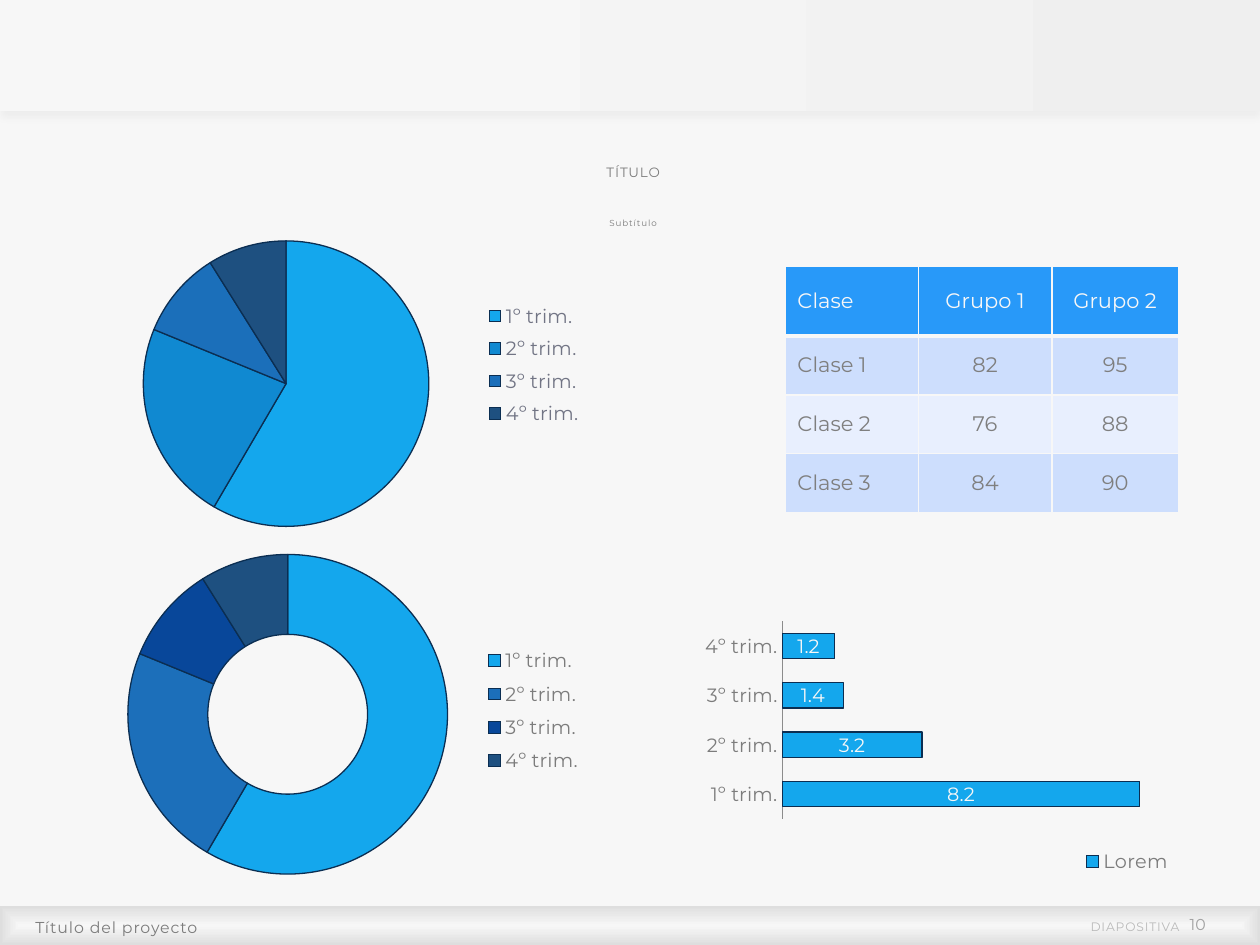
import pptx
import pptx.chart.data
import pptx.dml.color
import pptx.enum.chart
import pptx.enum.shapes
import pptx.enum.text
import pptx.oxml
import pptx.oxml.ns
import pptx.util
from dataclasses import dataclass

Pt = pptx.util.Pt
qn = pptx.oxml.ns.qn
CHART = pptx.enum.chart.XL_CHART_TYPE
LEGEND = pptx.enum.chart.XL_LEGEND_POSITION
ALIGN = pptx.enum.text.PP_ALIGN
ANCHOR = pptx.enum.text.MSO_ANCHOR

# Content
TITLE, SUBTITLE, PROJECT = "TÍTULO", "Subtítulo", "Título del proyecto"
PAGE_LABEL, PAGE_NUMBER = "DIAPOSITIVA", "10"
QUARTERS = ["1º trim.", "2º trim.", "3º trim.", "4º trim."]
SHARES = ("Series 1", [59, 23, 10, 9])
AMOUNTS = ("Lorem", [8.2, 3.2, 1.4, 1.2])
CLASSES = [
    ("Clase", "Grupo 1", "Grupo 2"),
    ("Clase 1", "82", "95"),
    ("Clase 2", "76", "88"),
    ("Clase 3", "84", "90"),
]


@dataclass(frozen=True)
class Theme:
    font: str = "Montserrat"
    paper: str = "F7F7F7"
    header_end: str = "EFEFEF"
    footer_edge: str = "DEDEDE"
    text: str = "7C7C7C"
    pie_legend: str = "717484"
    cell_text: str = "7F7F7F"
    page_label: str = "B9B9B9"
    page_number: str = "A1A1A1"
    outline: str = "0B2E52"
    axis: str = "8C8C8C"
    bar: str = "14A7ED"
    table_head: str = "2899F9"
    bands: tuple = ("CDDEFD", "E8EFFE")
    pie: tuple = ("14A7ED", "1089D1", "1B6FBA", "1E5080")
    ring: tuple = ("14A7ED", "1C6FBA", "08479A", "1E5080")
    title_size: float = 7.7
    subtitle_size: float = 5
    small: float = 7
    note: float = 9
    chart_size: float = 11
    table_size: float = 12


T = Theme()


def rgb(color):
    return pptx.dml.color.RGBColor.from_string(color)


def points(*lengths):
    return [Pt(v) for v in lengths]


def style(font, size, color):
    font.name, font.size, font.bold = T.font, Pt(size), False
    font.color.rgb = rgb(color)


def write(sp, box, text, size, color, align, anchor=ANCHOR.MIDDLE, inset=0, leading=1, spacing=0):
    sp.left, sp.top, sp.width, sp.height = points(*box)
    tf = sp.text_frame
    tf.text, tf.word_wrap, tf.vertical_anchor = text, True, anchor
    tf.auto_size = pptx.enum.text.MSO_AUTO_SIZE.NONE
    tf.margin_left, tf.margin_top, tf.margin_right, tf.margin_bottom = points(inset, 0, 0, 0)
    p = tf.paragraphs[0]
    p.alignment, p.line_spacing, p.space_before = align, leading, Pt(0)
    style(p.runs[0].font, size, color)
    p.runs[0].font._element.set("spc", str(spacing))


def gradient_bar(s, top, height, stops):
    sp = s.shapes.add_shape(pptx.enum.shapes.MSO_SHAPE.RECTANGLE, *points(0, top, 720, height))
    sp.fill.gradient()
    for stop, (position, color) in zip(sp.fill.gradient_stops, stops):
        stop.position, stop.color.rgb = position, rgb(color)
    sp.fill.gradient_angle = 0
    sp.line.fill.background()
    sp.shadow.inherit = False
    s.shapes._spTree.insert(2, sp._element)  # behind the placeholders
    return sp


def xml(tag, body="", attrs=""):
    space = pptx.oxml.ns.nsdecls("a", "c")
    return pptx.oxml.parse_xml(f"<{tag} {space} {attrs}>{body}</{tag}>")


def layout(x, y, w, h, inner=False):
    target = '<c:layoutTarget val="inner"/>' if inner else ""
    modes = '<c:xMode val="edge"/><c:yMode val="edge"/>'
    sizes = "".join(f'<c:{k} val="{v}"/>' for k, v in zip("xywh", (x, y, w, h)))
    return xml("c:layout", f"<c:manualLayout>{target}{modes}{sizes}</c:manualLayout>")


def add_chart(s, kind, box, series, plot, legend, position, legend_color):
    data = pptx.chart.data.CategoryChartData()
    data.categories = QUARTERS
    data.add_series(*series)
    chart = s.shapes.add_chart(kind, *points(*box), data).chart
    chart.has_title = False
    style(chart.font, T.chart_size, T.text)
    area = chart._chartSpace.chart.plotArea
    for old in area.findall(qn("c:layout")):
        area.remove(old)
    area.insert(0, layout(*plot, inner=True))
    chart.has_legend = True
    chart.legend.position = position
    chart.legend.include_in_layout = False
    style(chart.legend.font, T.chart_size, legend_color)
    element = chart.legend._element
    for old in element.findall(qn("c:layout")):
        element.remove(old)
    element.find(qn("c:legendPos")).addnext(layout(*legend))
    return chart


def paint(part, color):
    part.format.fill.solid()
    part.format.fill.fore_color.rgb = rgb(color)
    part.format.line.color.rgb = rgb(T.outline)
    part.format.line.width = Pt(0.75)


def border(cell, widths):
    tc_pr = cell._tc.get_or_add_tcPr()
    for i, (side, width) in enumerate(zip("LRTB", widths)):
        fill = f'<a:solidFill><a:srgbClr val="{T.paper}"/></a:solidFill>'
        tc_pr.insert(i, xml(f"a:ln{side}", fill, f'w="{Pt(width)}"'))


def add_class_table(s):
    table = s.shapes.add_table(len(CLASSES), 3, *points(448.5, 152, 225, 141)).table
    for column, width in zip(table.columns, (76.3, 76.3, 72.4)):
        column.width = Pt(width)
    for i, values in enumerate(CLASSES):
        table.rows[i].height = Pt(33.6 if i == 0 else 40) if i else Pt(40)
        if i:
            table.rows[i].height = Pt(33.6)
        for j, value in enumerate(values):
            cell = table.cell(i, j)
            cell.text, cell.vertical_anchor = value, ANCHOR.MIDDLE
            cell.fill.solid()
            cell.fill.fore_color.rgb = rgb(T.bands[(i - 1) % 2] if i else T.table_head)
            border(cell, (1, 1, 3 if i == 1 else 1, 1 if i else 3))
            p = cell.text_frame.paragraphs[0]
            p.alignment = ALIGN.CENTER if j else ALIGN.LEFT
            style(p.runs[0].font, T.table_size, T.cell_text if i else T.paper)


def main():
    prs = pptx.Presentation()
    prs.slide_width, prs.slide_height = Pt(720), Pt(540)
    s = prs.slides.add_slide(prs.slide_layouts[4])
    s.background.fill.solid()
    s.background.fill.fore_color.rgb = rgb(T.paper)

    # Header and footer bars
    header = gradient_bar(s, 0, 63.4, [(0.28, T.paper), (1, T.header_end)])
    shadow = '<a:srgbClr val="000000"><a:alpha val="3000"/></a:srgbClr>'
    header._element.spPr.find(qn("a:effectLst")).append(
        xml("a:outerShdw", shadow, f'blurRad="{Pt(4)}" dist="{Pt(3)}" dir="5400000"'))
    footer = gradient_bar(s, 517.7, 22.3, [(0, T.paper), (1, T.footer_edge)])
    linear = footer._element.spPr.find(qn("a:gradFill")).find(qn("a:lin"))
    center = '<a:fillToRect l="50000" t="50000" r="50000" b="50000"/>'
    linear.getparent().replace(linear, xml("a:path", center, 'path="shape"'))

    # Title, subtitle and project name
    holders = {ph.placeholder_format.idx: ph for ph in s.placeholders}
    for idx, box, text, size, align, leading in (
        (0, (229.7, 84.2, 261.4, 29.5), TITLE, T.title_size, ALIGN.CENTER, 0.94),
        (1, (229.7, 116, 261.4, 23), SUBTITLE, T.subtitle_size, ALIGN.CENTER, 0.94),
        (3, (17.3, 517.7, 530, 22.3), PROJECT, T.note, ALIGN.LEFT, 1.14),
    ):
        write(holders.pop(idx), box, text, size, T.text, align, inset=2.9, leading=leading, spacing=50)
    for ph in holders.values():
        ph._element.getparent().remove(ph._element)

    # Page label and number
    for left, width, text, size, color, spacing in (
        (610, 64, PAGE_LABEL, T.small, T.page_label, 50),
        (674, 15, PAGE_NUMBER, T.note, T.page_number, 0),
    ):
        box = (left, 522.7, width, 10.8)
        write(s.shapes.add_textbox(*points(*box)), box, text, size, color,
              ALIGN.RIGHT, ANCHOR.BOTTOM, spacing=spacing)

    # Pie and ring
    for kind, box, plot, legend, colors, legend_color in (
        (CHART.PIE, (45.4, 118, 295.2, 196.6), (0.08, 0.1, 0.64, 0.83),
         (0.77, 0.26, 0.22, 0.4), T.pie, T.pie_legend),
        (CHART.DOUGHNUT, (45.4, 306.7, 305.3, 203), (0.09, 0.05, 0.6, 0.9),
         (0.74, 0.29, 0.22, 0.4), T.ring, T.text),
    ):
        chart = add_chart(s, kind, box, SHARES, plot, legend, LEGEND.RIGHT, legend_color)
        for i, color in enumerate(colors):
            paint(chart.plots[0].series[0].points[i], color)

    # Bars
    chart = add_chart(s, CHART.BAR_STACKED, (387.4, 306.7, 298.8, 201.6), AMOUNTS,
                      (0.2, 0.24, 0.75, 0.56), (0.75, 0.87, 0.22, 0.1), LEGEND.TOP, T.text)
    plot = chart.plots[0]
    plot.gap_width, plot.overlap, plot.vary_by_categories = 95, 100, False
    paint(plot.series[0], T.bar)
    plot.has_data_labels = True
    plot.data_labels.show_value = True
    style(plot.data_labels.font, T.chart_size, T.paper)
    values, quarters = chart.value_axis, chart.category_axis
    values.visible, values.has_major_gridlines = False, False
    values.minimum_scale, values.maximum_scale = 0, 9
    quarters.major_tick_mark = pptx.enum.chart.XL_TICK_MARK.NONE
    quarters.format.line.color.rgb = rgb(T.axis)
    style(quarters.tick_labels.font, T.chart_size, T.text)

    add_class_table(s)
    prs.save("out.pptx")


if __name__ == "__main__":
    main()
